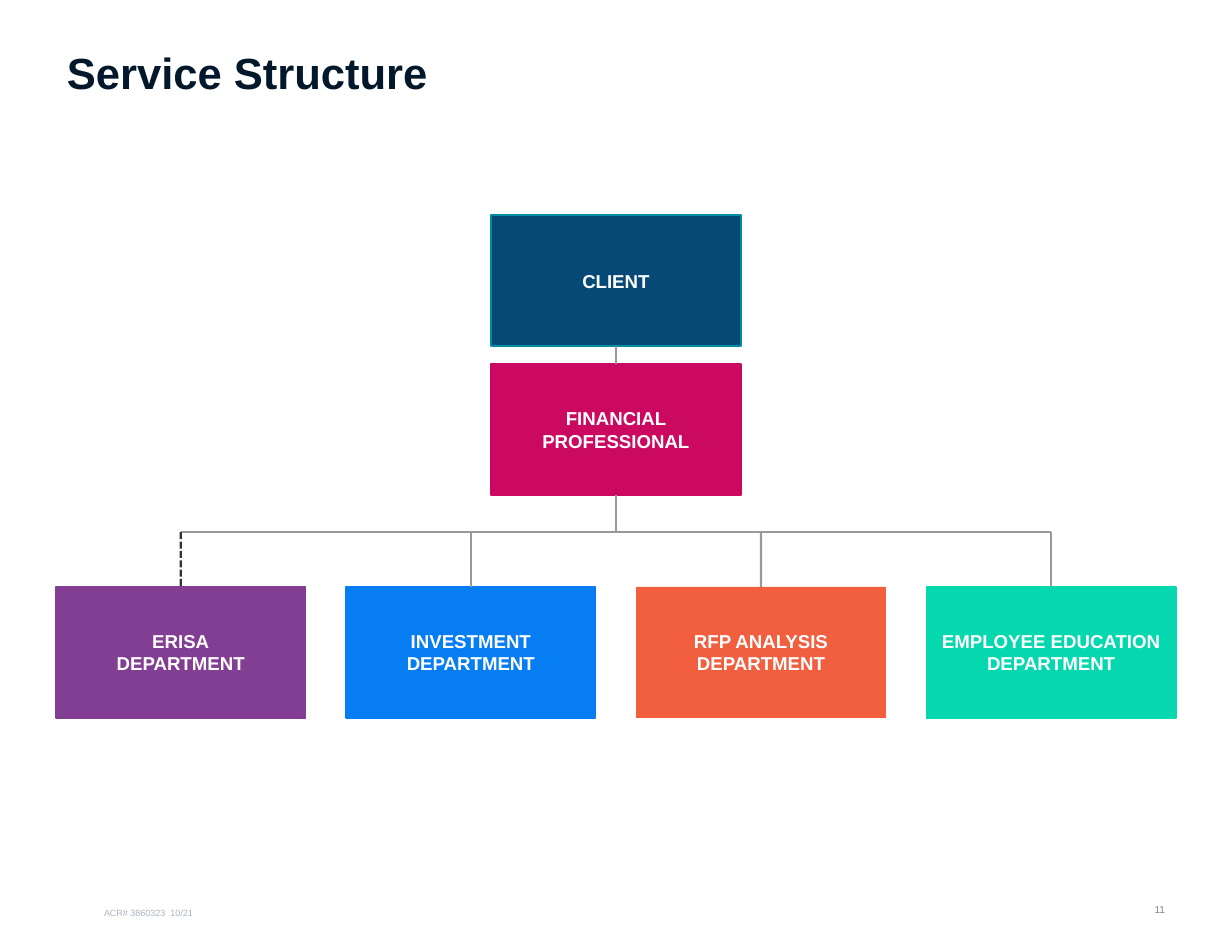
from lxml.etree import SubElement
from pptx import Presentation
from pptx.dml.color import RGBColor
from pptx.enum.dml import MSO_LINE
from pptx.enum.shapes import MSO_CONNECTOR, MSO_SHAPE
from pptx.enum.text import MSO_ANCHOR, PP_ALIGN
from pptx.oxml.ns import qn
from pptx.util import Cm, Pt

WHITE = RGBColor(0xFF, 0xFF, 0xFF)
INK = RGBColor(0x03, 0x18, 0x2A)
GREY = RGBColor(0x98, 0x9A, 0x98)
DARK = RGBColor(0x32, 0x33, 0x32)
FOLIO = RGBColor(0x83, 0x86, 0x83)
PALE = RGBColor(0xAA, 0xB4, 0xC1)
NAVY = RGBColor(0x07, 0x49, 0x76)
TEAL = RGBColor(0x00, 0x8F, 0xA2)
PINK = RGBColor(0xCC, 0x09, 0x61)
PLUM = RGBColor(0x82, 0x3E, 0x93)
BLUE = RGBColor(0x06, 0x7D, 0xF3)
CORAL = RGBColor(0xF1, 0x5F, 0x3F)
MINT = RGBColor(0x05, 0xD8, 0xAF)

# Grid in centimetres
WIDE, HIGH = 5.66, 2.97
LEFT, STEP = 1.27, 6.58
MID = 13.97
BUS, ROW = 12.07, 13.31


class Chart:
    """Draws text, boxes and lines in one style on one slide."""

    def __init__(self, slide, face="Arial"):
        self.slide = slide
        self.face = face

    def fill_text(self, frame, text, size, color, bold=False,
                  align=PP_ALIGN.LEFT, anchor=MSO_ANCHOR.MIDDLE, space=1.0):
        frame.word_wrap = True
        frame.vertical_anchor = anchor
        frame.text = text
        look = {"name": self.face, "size": Pt(size), "bold": bold}
        for para in frame.paragraphs:
            para.alignment = align
            para.line_spacing = space
            for key, value in look.items():
                setattr(para.font, key, value)
            para.font.color.rgb = color

    def label(self, area, text, size, color, **style):
        box = self.slide.shapes.add_textbox(*map(Cm, area))
        self.fill_text(box.text_frame, text, size, color, **style)

    def box(self, left, top, text, fill, edge):
        area = map(Cm, (left, top, WIDE, HIGH))
        box = self.slide.shapes.add_shape(MSO_SHAPE.ROUNDED_RECTANGLE, *area)
        box.adjustments[0] = 0
        box.shadow.inherit = False
        box.fill.solid()
        box.fill.fore_color.rgb = fill
        if edge is None:
            box.line.fill.background()
        else:
            box.line.color.rgb = edge
            box.line.width = Pt(1)
        self.fill_text(box.text_frame, text, 12, WHITE, bold=True,
                       align=PP_ALIGN.CENTER)
        return box

    def line(self, start, end, color=GREY, dash=None, above=None, below=None):
        line = self.slide.shapes.add_connector(
            MSO_CONNECTOR.STRAIGHT, *map(Cm, start + end))
        if above is not None:
            line.begin_connect(above, 2)
        if below is not None:
            line.end_connect(below, 0)
        line.line.color.rgb = color
        line.line.width = Pt(1.5)
        line.line.dash_style = dash
        SubElement(line._element.spPr, qn("a:effectLst"))


def main():
    deck = Presentation()
    deck.slide_width, deck.slide_height = Cm(27.94), Cm(21.59)
    chart = Chart(deck.slides.add_slide(deck.slide_layouts[6]))

    # Title
    chart.label((1.27, 1.17, 25.4, 1.07), "Service Structure", 28, INK,
                bold=True, space=0.9)

    # Client and adviser
    trunk = MID - WIDE / 2
    client = chart.box(trunk, 4.88, "CLIENT", NAVY, TEAL)
    lead = chart.box(trunk, 8.26, "FINANCIAL PROFESSIONAL", PINK, PINK)
    chart.line((MID, 4.88 + HIGH), (MID, 8.26), above=client, below=lead)
    chart.line((MID, 8.26 + HIGH), (MID, BUS), above=lead)

    # Shared bar
    first = LEFT + WIDE / 2
    chart.line((first, BUS), (first + 3 * STEP, BUS))

    # Departments
    teams = [
        ("ERISA\nDEPARTMENT", PLUM, PLUM, DARK, MSO_LINE.SQUARE_DOT),
        ("INVESTMENT DEPARTMENT", BLUE, BLUE, GREY, None),
        ("RFP ANALYSIS\vDEPARTMENT", CORAL, None, GREY, None),
        ("EMPLOYEE EDUCATION DEPARTMENT", MINT, MINT, GREY, None),
    ]
    for i, (text, fill, edge, color, dash) in enumerate(teams):
        team = chart.box(LEFT + i * STEP, ROW, text, fill, edge)
        x = first + i * STEP
        chart.line((x, BUS), (x, ROW), color, dash, below=team)

    # Footer
    chart.label((2.11, 20.32, 12.07, 0.64), "ACR# 3860323  10/21", 5.8, PALE,
                anchor=MSO_ANCHOR.BOTTOM)
    chart.label((25.4, 20.14, 1.27, 0.97), "11", 6.5, FOLIO,
                align=PP_ALIGN.RIGHT)

    deck.save("out.pptx")


if __name__ == "__main__":
    main()
